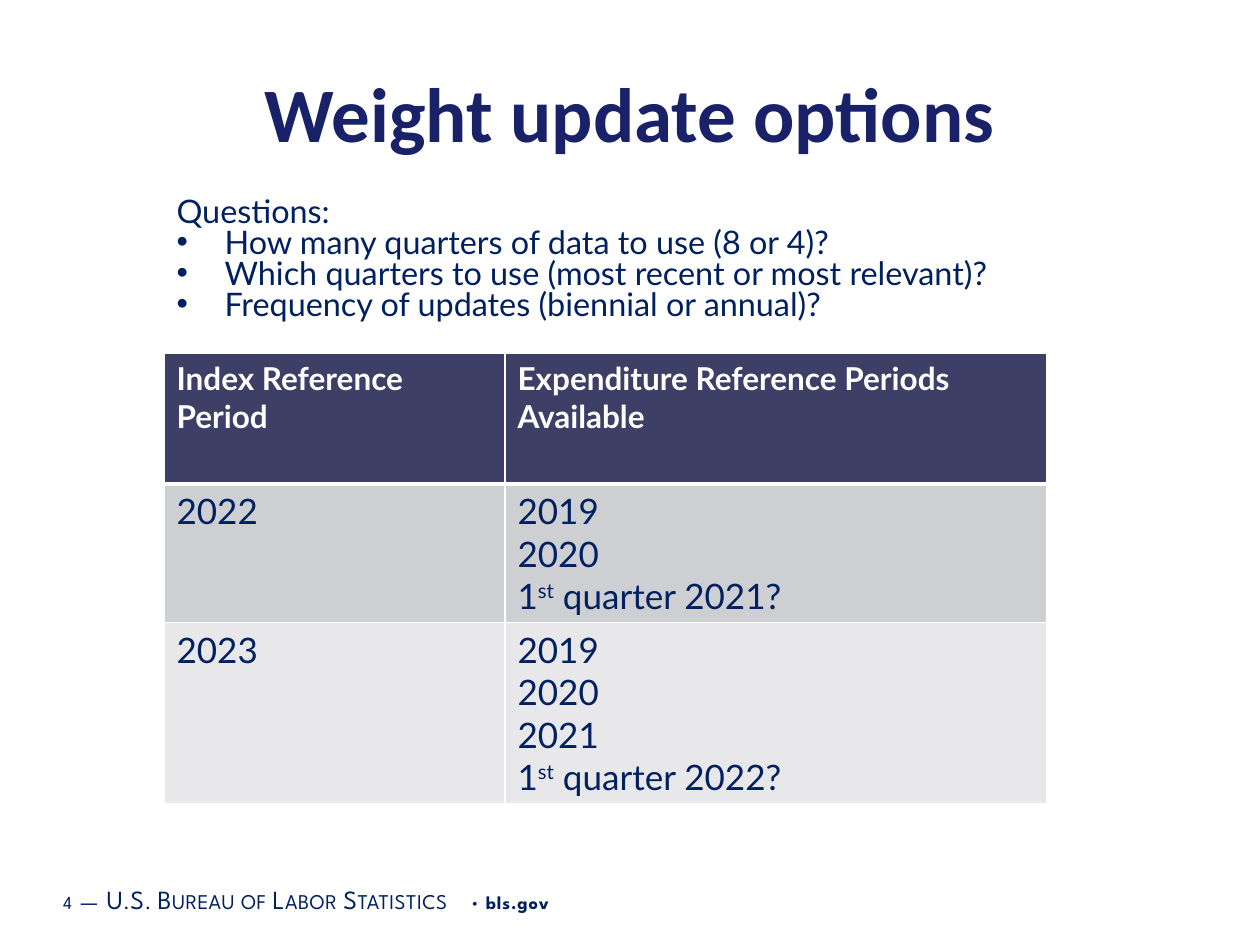
from lxml.etree import SubElement
from pptx import Presentation
from pptx.dml.color import RGBColor
from pptx.enum.text import MSO_ANCHOR, MSO_AUTO_SIZE, PP_ALIGN
from pptx.oxml import parse_xml
from pptx.oxml.ns import nsdecls, qn
from pptx.util import Emu, Pt

PX = 914400 / 126
NAVY = RGBColor(0x00, 0x20, 0x60)
TITLE_BLUE = RGBColor(0x19, 0x21, 0x68)
HEADER_BLUE = RGBColor(0x3E, 0x3F, 0x67)
BAND_DARK = RGBColor(0xCE, 0xCF, 0xD3)
BAND_LIGHT = RGBColor(0xE8, 0xE8, 0xEB)
WHITE = RGBColor(0xFF, 0xFF, 0xFF)

TITLE_FONT = {"name": "Calibri", "size": Pt(44), "bold": True}
QUESTION_FONT = {"name": "Lato", "size": Pt(18.5), "bold": False}
HEADER_FONT = {"name": "Lato", "size": Pt(18), "bold": True}
PERIOD_FONT = {"name": "Lato", "size": Pt(20), "bold": False}
FOOTER_FONT = {"name": "League Spartan", "bold": False}

QUESTIONS = [
    "How many quarters of data to use (8 or 4)?",
    "Which quarters to use (most recent or most relevant)?",
    "Frequency of updates (biennial or annual)?",
]
HEADER = ["Index Reference Period", "Expenditure Reference Periods Available"]
PERIODS = [
    ("2022", ["2019", "2020", "1^st^ quarter 2021?"]),
    ("2023", ["2019", "2020", "2021", "1^st^ quarter 2022?"]),
]
COLUMN_WIDTHS = [341, 542]
ROW_HEIGHTS = [131, 138, 181]
SMALL_CAPS = {"spc": "30", "cap": "small"}
SPACED = {"spc": "50"}
FOOTER_RUNS = [
    ("4", 10.5, SPACED),
    (" ", 16, SPACED),
    ("—", 15, SMALL_CAPS),
    (" ", 16, SPACED),
    ("U.S. Bureau of Labor Statistics", 15, SMALL_CAPS),
    (" • ", 10.5, SPACED),
    ("bls.gov", 10.5, {**SPACED, "b": "1"}),
]


def px(length):
    """Turn a length in px into EMU."""
    return Emu(round(length * PX))


def place(part, box):
    """Move a placeholder to a box of left, top, width and height."""
    for side, length in zip(("left", "top", "width", "height"), box):
        setattr(part, side, px(length))


def add_run(paragraph, text, font_format, color):
    """Add one formatted run to a paragraph."""
    run = paragraph.add_run()
    run.text = text
    for attribute, value in font_format.items():
        setattr(run.font, attribute, value)
    run.font.color.rgb = color
    return run


def build_title(title, box):
    """Fill the title placeholder."""
    place(title, box)
    title.text_frame.vertical_anchor = MSO_ANCHOR.TOP
    heading = title.text_frame.paragraphs[0]
    heading.alignment = PP_ALIGN.CENTER
    add_run(heading, "Weight update options", TITLE_FONT, TITLE_BLUE)


def build_questions(body, box):
    """Fill the body placeholder with the lead-in and its bulleted questions."""
    place(body, box)
    frame = body.text_frame
    frame.auto_size = MSO_AUTO_SIZE.NONE
    frame.vertical_anchor = MSO_ANCHOR.MIDDLE
    for index, question in enumerate(["Questions:", *QUESTIONS]):
        line = frame.add_paragraph() if index else frame.paragraphs[0]
        properties = line._p.get_or_add_pPr()
        indent = px(48) if index else 0
        properties.set("marL", str(indent))
        properties.set("indent", str(-indent))
        if index:
            SubElement(properties, qn("a:buFont")).set("typeface", "Arial")
            SubElement(properties, qn("a:buChar")).set("char", "•")
        else:
            SubElement(properties, qn("a:buNone"))
        spacing = {"line_spacing": 0.8, "space_before": Pt(0), "space_after": Pt(0)}
        for attribute, value in spacing.items():
            setattr(line, attribute, value)
        add_run(line, question, QUESTION_FONT, NAVY)


def fill_cell(cell, lines, font_format, color, fill, top=1, bottom=1):
    """Write a cell's lines, with ^ around superscripts, and give it fill and borders."""
    for index, text in enumerate(lines):
        line = cell.text_frame.add_paragraph() if index else cell.text_frame.paragraphs[0]
        for part, piece in enumerate(text.split("^")):
            run = add_run(line, piece, font_format, color)
            if part % 2:
                run.font._element.set("baseline", "30000")
    cell.fill.solid()
    cell.fill.fore_color.rgb = fill
    properties = cell._tc.get_or_add_tcPr()
    borders = {"lnL": 1, "lnR": 1, "lnT": top, "lnB": bottom}
    for position, (side, width) in enumerate(borders.items()):
        properties.insert(position, parse_xml(
            f'<a:{side} {nsdecls("a")} w="{Pt(width)}"><a:solidFill>'
            f'<a:srgbClr val="{WHITE}"/></a:solidFill></a:{side}>'))


def build_periods(slide, box):
    """Add the table of reference periods."""
    table = slide.shapes.add_table(
        len(ROW_HEIGHTS), len(COLUMN_WIDTHS), *map(px, box)).table
    for column, width in zip(table.columns, COLUMN_WIDTHS):
        column.width = px(width)
    for row, height in zip(table.rows, ROW_HEIGHTS):
        row.height = px(height)
    for column, label in enumerate(HEADER):
        fill_cell(table.cell(0, column), [label], HEADER_FONT, WHITE, HEADER_BLUE, bottom=3)
    for row, (index_period, available) in enumerate(PERIODS, 1):
        band = BAND_DARK if row % 2 else BAND_LIGHT
        for column, lines in enumerate(([index_period], available)):
            fill_cell(table.cell(row, column), lines, PERIOD_FONT, NAVY, band,
                      top=3 if row == 1 else 1)


def build_footer(slide, box):
    """Add the page number and agency line."""
    frame = slide.shapes.add_textbox(*map(px, box)).text_frame
    margins = {"margin_left": px(9), "margin_right": px(9),
               "margin_top": px(5), "margin_bottom": px(5)}
    for attribute, value in margins.items():
        setattr(frame, attribute, value)
    frame.word_wrap = True
    frame.vertical_anchor = MSO_ANCHOR.MIDDLE
    for text, size, character_format in FOOTER_RUNS:
        run = add_run(frame.paragraphs[0], text, {**FOOTER_FONT, "size": Pt(size)}, NAVY)
        for attribute, value in character_format.items():
            run.font._element.set(attribute, value)


def main():
    """Build the slide and save it."""
    presentation = Presentation()
    presentation.slide_width = px(1260)
    presentation.slide_height = px(945)
    slide = presentation.slides.add_slide(presentation.slide_layouts[1])
    build_footer(slide, (54, 873, 798, 50))
    build_title(slide.shapes.title, (63, 59, 1134, 151))
    build_periods(slide, (164, 353, sum(COLUMN_WIDTHS), sum(ROW_HEIGHTS)))
    build_questions(slide.placeholders[1], (164, 187, 883, 147))
    presentation.save("out.pptx")


if __name__ == "__main__":
    main()
